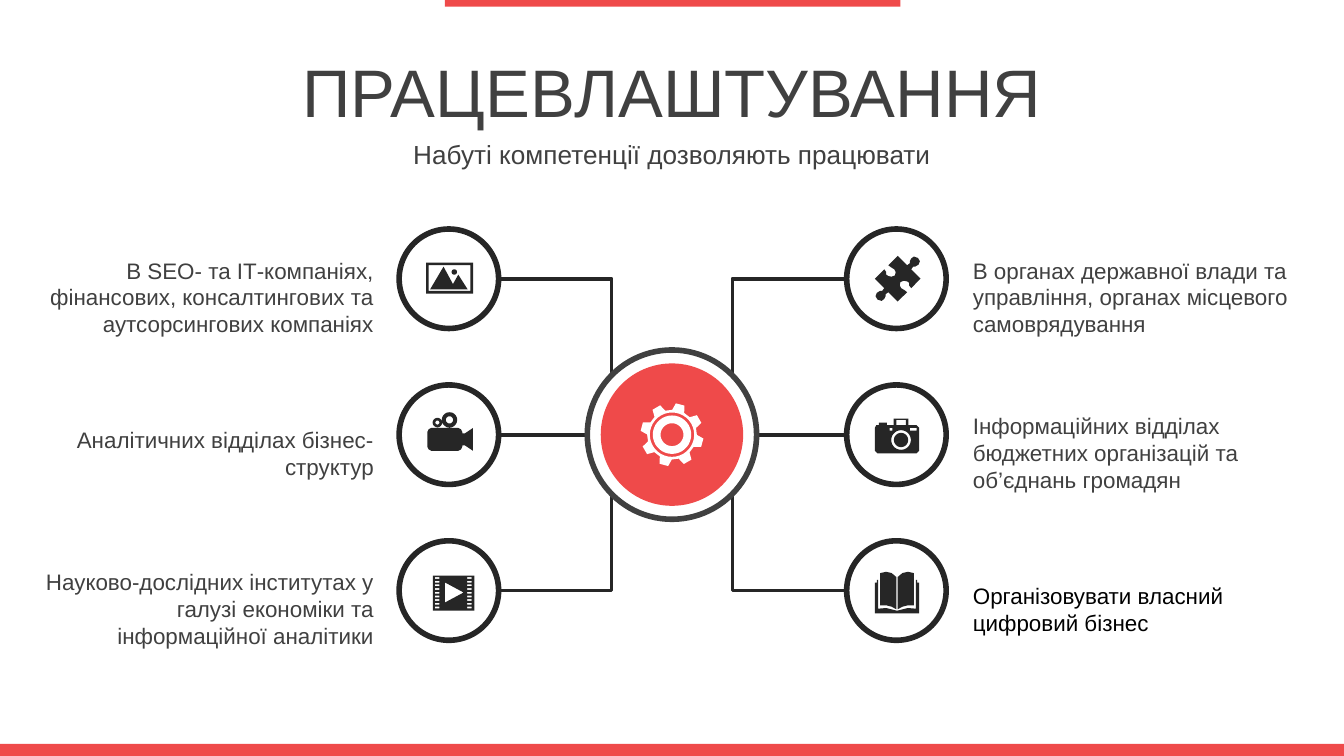
from math import cos, radians, sin

from lxml import etree
from pptx import Presentation
from pptx.dml.color import RGBColor
from pptx.enum.shapes import MSO_CONNECTOR, MSO_SHAPE
from pptx.enum.text import MSO_ANCHOR, PP_ALIGN
from pptx.oxml.ns import qn
from pptx.util import Inches, Pt

RECT, OVAL = MSO_SHAPE.RECTANGLE, MSO_SHAPE.OVAL
STRAIGHT, ELBOW = MSO_CONNECTOR.STRAIGHT, MSO_CONNECTOR.ELBOW
LEFT, CENTER, RIGHT = PP_ALIGN.LEFT, PP_ALIGN.CENTER, PP_ALIGN.RIGHT
MIDDLE = MSO_ANCHOR.MIDDLE

RED = RGBColor(0xEF, 0x4A, 0x4A)
WHITE = RGBColor(0xFF, 0xFF, 0xFF)
BLACK = RGBColor(0x00, 0x00, 0x00)
GRAY = RGBColor(0x40, 0x40, 0x40)
DARK = RGBColor(0x26, 0x26, 0x26)

WIDTH = 10
HEIGHT = WIDTH * 9 / 16
HUB_X, HUB_Y = WIDTH / 2, HEIGHT * 23 / 40
HUB_RADIUS, CORE_RADIUS, NODE_RADIUS = 0.63, 0.53, 0.37
ROW_STEP, BEND_OFFSET, BEND_RISE = 1.16, 0.45, 0.44
LABEL_WIDTH, LABEL_HEIGHT = 2.68, 0.71
NODE_COLUMNS = {-1: 3.34, 1: 6.67}
LABEL_LEFTS = {-1: 0.2, 1: 7.14}
PRECISION = 100


def polar(x, y, radius, degrees):
    """Return the point at an angle on a circle."""
    return x + radius * cos(radians(degrees)), y + radius * sin(radians(degrees))


def disc(x, y, radius):
    """Return a round contour."""
    return [polar(x, y, radius, angle) for angle in range(0, 360, 10)]


def box(left, top, right, bottom):
    """Return a rectangular contour."""
    return [(left, top), (right, top), (right, bottom), (left, bottom)]


def picture_icon():
    """Return the contours of a framed landscape."""
    mountains = [(-4, -9), (3, 4), (7, -3), (14, 8), (-14, 8)]
    return [box(-17, -12, 18, 11), box(-15, -10, 16, 9), mountains, disc(4, -5, 2)]


def video_icon():
    """Return the contours of a film camera."""
    body = [(-13, -5), (7, -5), (9, -4), (10, -2), (10, -1), (12, -1), (18, -5),
            (18, 12), (12, 8), (10, 8), (10, 9), (9, 11), (7, 12),
            (-13, 12), (-15, 11), (-16, 9), (-16, -2), (-15, -4)]
    return [body, disc(-8.5, -9, 3.5), disc(-8.5, -9, 1.5),
            disc(0.5, -11, 5.7), disc(0.5, -11, 2.7)]


def film_icon():
    """Return the contours of a perforated film frame."""
    holes = [box(left, -10 + 2.75 * row, right, -8.7 + 2.75 * row)
             for left, right in ((-10.5, -7), (13.5, 17)) for row in range(9)]
    return [box(-12, -11, 19, 15), [(-3, -6), (-3, 9), (11, 1.5)], *holes]


def puzzle_icon():
    """Return the contour of a puzzle piece, symmetric about its middle."""
    half = [(7, -10), (9, -11.5), (9, -13), (10, -15), (12, -16.5), (15, -15.5),
            (16.5, -13), (15.5, -10.5), (13, -9), (11.5, -9), (10, -7), (17, 0),
            (10, 7), (8.5, 5), (8.5, 3), (7, 2), (4.5, 1.5), (2, 2.5),
            (1.5, 5), (2.5, 7), (5, 8.5), (7, 10), (0, 17)]
    return [[(1 + sign * x, sign * y) for sign in (1, -1) for x, y in half]]


def camera_icon():
    """Return the contours of a photo camera."""
    body = [(-16, -5), (-15, -7), (-13, -7), (-13, -9), (-7, -9), (-7, -7),
            (-2, -7), (-2, -12), (9, -12), (9, -7), (15, -7), (17, -5),
            (17, 12), (15, 14), (-14, 14), (-16, 12)]
    return [body, box(-5, -5, -3, -3), box(10, -5, 15, -3), box(0, -11, 7, -7),
            disc(3.5, 4, 7.3), disc(3.5, 4, 5.3)]


def book_icon():
    """Return the contours of an open book, mirrored about its spine."""
    page = [(0.4, -10), (4, -13), (8, -14), (12.5, -13), (12.5, 11), (8, 11),
            (4, 12), (0.4, 14)]
    cover = [(14, -8), (14, 13.5), (8, 13), (0, 15), (0, 17), (16.5, 17),
             (16.5, -6), (15, -6), (15, -8)]
    return [[(0.5 + side * x, y) for x, y in part]
            for side in (-1, 1) for part in (page, cover)]


def gear_icon():
    """Return the contours of a gear with eight teeth."""
    teeth = [polar(0, 0, radius, 15 + 45 * tooth + turn) for tooth in range(8)
             for radius, turn in ((18.5, -14.5), (23.5, -8), (23.5, 8), (18.5, 14.5))]
    return [teeth, disc(0, 0, 16.5), disc(0, 0, 14.3), disc(0, 0, 8.5)]


def add_icon(slide, x, y, contours, color):
    """Draw contours, given in hundredths of an inch around a point."""
    scaled = [[(px * PRECISION, py * PRECISION) for px, py in contour]
              for contour in contours]
    builder = slide.shapes.build_freeform(*scaled[0][0],
                                          scale=Inches(0.01) / PRECISION)
    for number, contour in enumerate(scaled):
        if number:
            builder.move_to(*contour[0])
        builder.add_line_segments(contour[1:], close=True)
    icon = builder.convert_to_shape(Inches(x), Inches(y))
    paint(icon, color)


def paint(shape, fill, outline=None):
    """Set the fill and outline of a shape and drop its shadow."""
    shape.shadow.inherit = False
    shape.fill.solid()
    shape.fill.fore_color.rgb = fill
    if outline is None:
        shape.line.fill.background()
    else:
        shape.line.color.rgb = outline
        shape.line.width = Pt(3)


def add_bar(slide, left, top, width, height):
    """Draw a red bar on the edge of the slide."""
    paint(slide.shapes.add_shape(RECT, *map(Inches, (left, top, width, height))), RED)


def add_circle(slide, x, y, radius, fill, outline=None):
    """Draw a circle around a point."""
    place = map(Inches, (x - radius, y - radius, 2 * radius, 2 * radius))
    paint(slide.shapes.add_shape(OVAL, *place), fill, outline)


def add_text(slide, place, text, size, align, color=GRAY):
    """Write one vertically centred paragraph."""
    frame = slide.shapes.add_textbox(*map(Inches, place)).text_frame
    frame.word_wrap = True
    frame.vertical_anchor = MIDDLE
    paragraph = frame.paragraphs[0]
    paragraph.text = text
    paragraph.alignment = align
    font = paragraph.runs[0].font
    font.name, font.size, font.color.rgb = "Arial", Pt(size), color


def add_link(slide, side, row):
    """Join a node to the hub, straight or with one bend."""
    start = NODE_COLUMNS[side] - side * NODE_RADIUS, HUB_Y + row * ROW_STEP
    if row:
        end = HUB_X + side * BEND_OFFSET, HUB_Y + row * BEND_RISE
    else:
        end = HUB_X + side * HUB_RADIUS, HUB_Y
    link = slide.shapes.add_connector(ELBOW if row else STRAIGHT,
                                      *map(Inches, start + end))
    link.line.color.rgb = DARK
    link.line.width = Pt(2)
    properties = link._element.spPr
    if row:
        properties.find(qn("a:prstGeom")).set("prst", "bentConnector2")
    etree.SubElement(properties, qn("a:effectLst"))


def add_branch(slide, side, row, text, lines, label_y, icon, color=GRAY):
    """Draw one node with its link, icon and label."""
    x, y = NODE_COLUMNS[side], HUB_Y + row * ROW_STEP
    add_link(slide, side, row)
    add_circle(slide, x, y, NODE_RADIUS, WHITE, DARK)
    add_icon(slide, x, y, icon, DARK)
    height = LABEL_HEIGHT if lines == 3 else LABEL_HEIGHT * 0.7
    place = LABEL_LEFTS[side], label_y - height / 2, LABEL_WIDTH, height
    add_text(slide, place, text, 12, RIGHT if side < 0 else LEFT, color)


def main():
    """Build the slide and save it."""
    deck = Presentation()
    deck.slide_width, deck.slide_height = Inches(WIDTH), Inches(HEIGHT)
    slide = deck.slides.add_slide(deck.slide_layouts[6])
    add_bar(slide, 3.31, 0, 3.39, 0.05)
    add_bar(slide, 0, HEIGHT - 0.09, WIDTH, 0.09)
    add_text(slide, (0, 0.36, WIDTH, 0.63), "ПРАЦЕВЛАШТУВАННЯ", 36, CENTER)
    add_text(slide, (0, 0.99, WIDTH, 0.31),
             "Набуті компетенції дозволяють працювати", 14, CENTER)
    branches = [
        (-1, -1, "В SEO- та ІТ-компаніях, фінансових, консалтингових та "
         "аутсорсингових компаніях", 3, 2.21, picture_icon()),
        (-1, 0, "Аналітичних відділах бізнес-структур", 2, 3.37, video_icon()),
        (-1, 1, "Науково-дослідних інститутах у галузі економіки та "
         "інформаційної аналітики", 3, 4.53, film_icon()),
        (1, -1, "В органах державної влади та управління, органах місцевого "
         "самоврядування", 3, 2.21, puzzle_icon()),
        (1, 0, "Інформаційних відділах бюджетних організацій та об’єднань "
         "громадян", 3, 3.37, camera_icon()),
        (1, 1, "Організовувати власний цифровий бізнес", 2, 4.53, book_icon(), BLACK),
    ]
    for branch in branches:
        add_branch(slide, *branch)
    add_circle(slide, HUB_X, HUB_Y, HUB_RADIUS, WHITE, GRAY)
    add_circle(slide, HUB_X, HUB_Y, CORE_RADIUS, RED)
    add_icon(slide, HUB_X, HUB_Y, gear_icon(), WHITE)
    deck.save("out.pptx")


if __name__ == "__main__":
    main()
